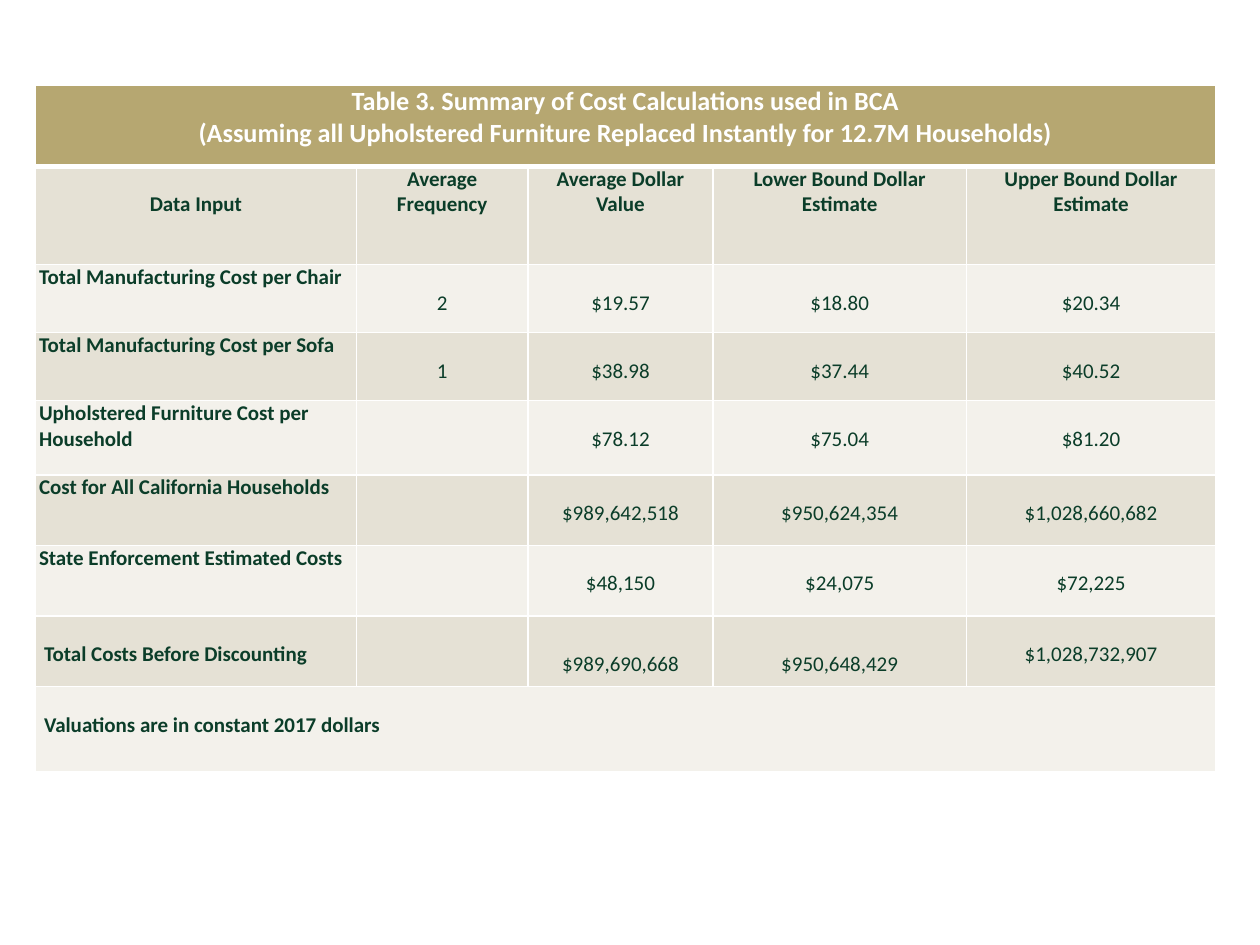
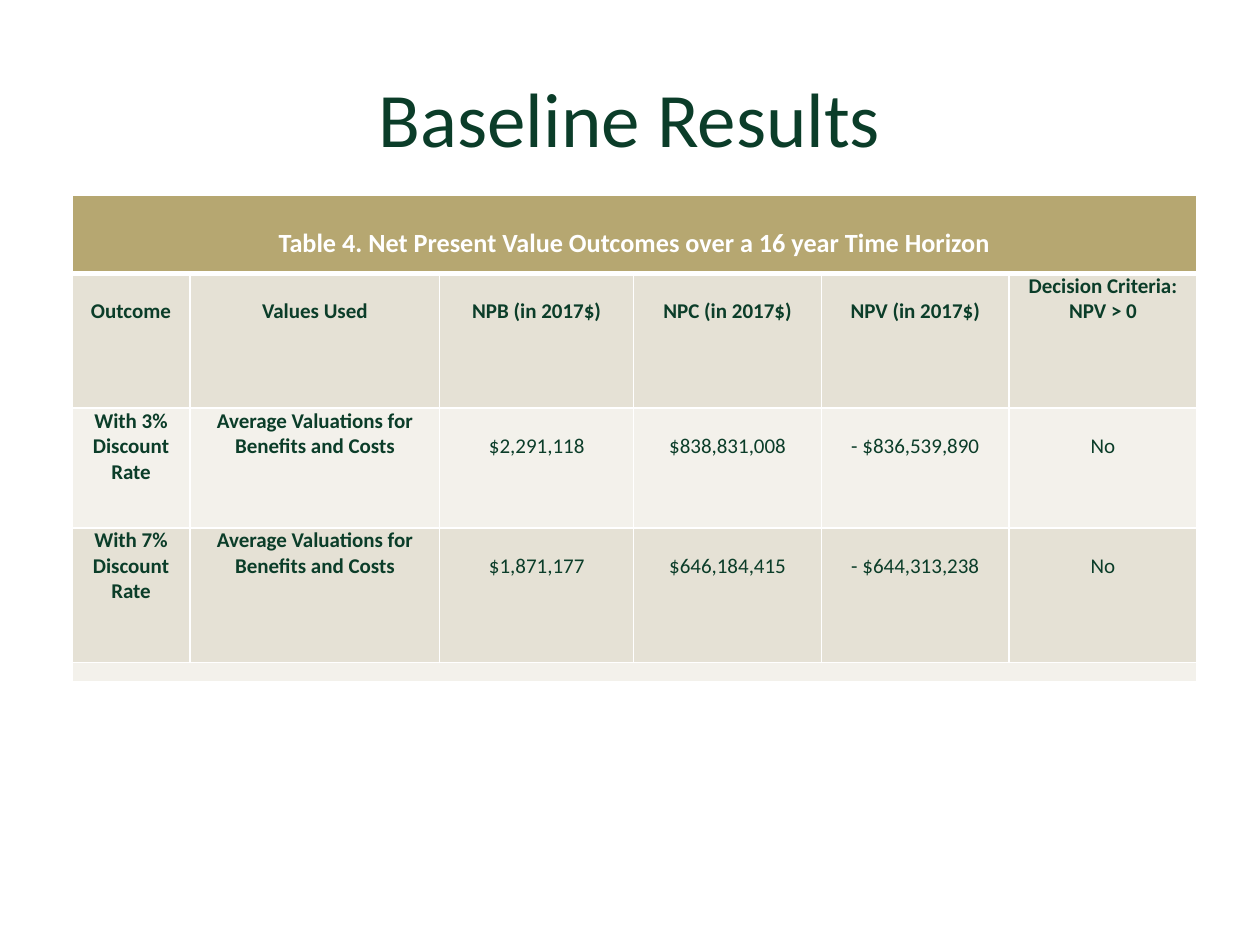
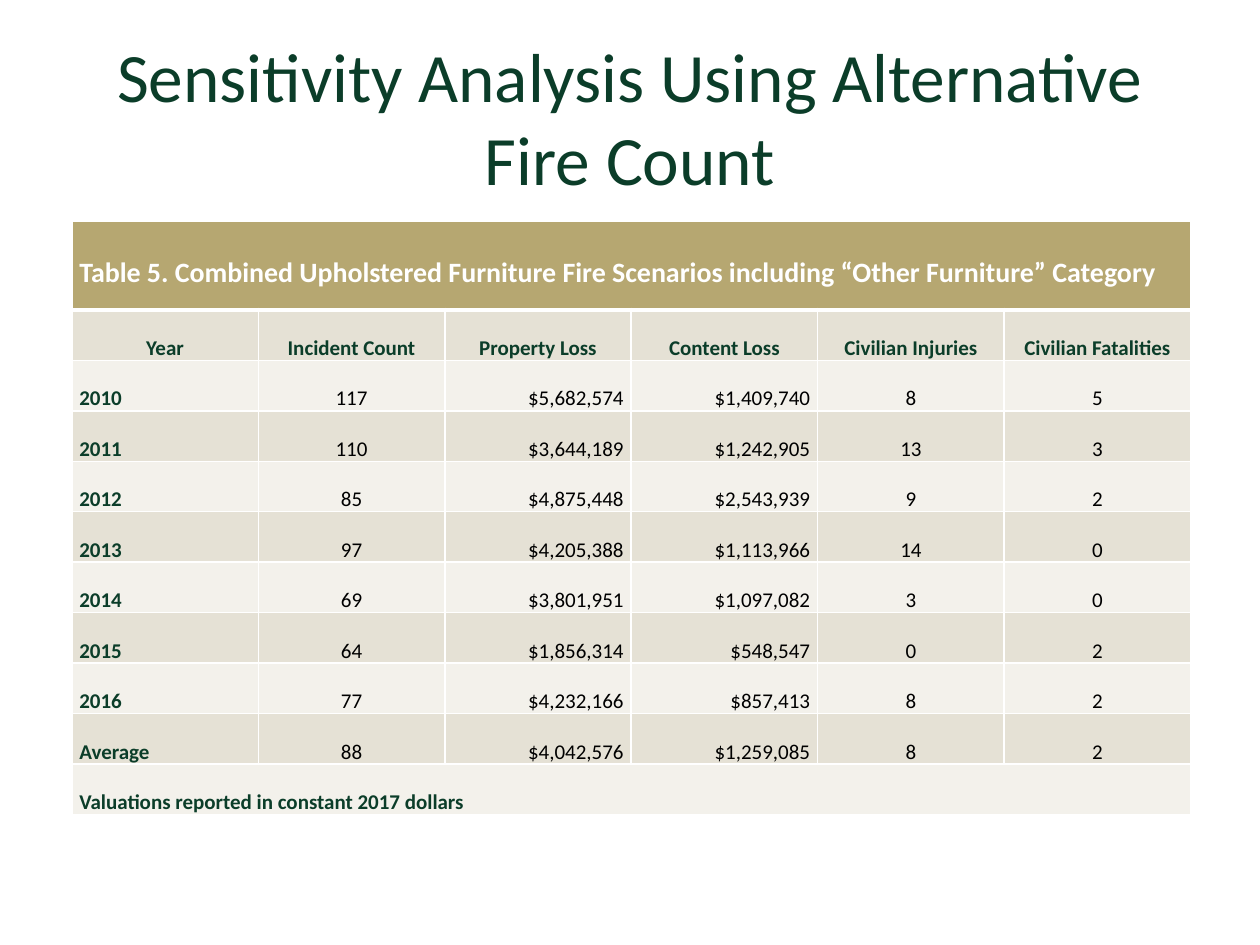
from lxml.etree import SubElement
from pptx import Presentation
from pptx.dml.color import RGBColor
from pptx.enum.text import MSO_ANCHOR as Anchor, PP_ALIGN as Align
from pptx.oxml.ns import qn
from pptx.util import Inches, Pt

FONT = "Calibri"
GREEN, GOLD, WHITE, BLACK = "0B3D29", "B6A771", "FFFFFF", "000000"
BANDS = "E5E1D5", "F3F1EB"
TEXT_SIZE, EMPTY_SIZE = 12, 9
LEFT, CENTER, RIGHT = Align.LEFT, Align.CENTER, Align.RIGHT

# Each table has a caption row, a header row, body rows and a note row.
# "single" and "anchors" are keyed by (row, column); other cells are
# double-spaced and anchored at the top.
COSTS = {
    "caption": "Table 3. Summary of Cost Calculations used in BCA\n"
               "(Assuming all Upholstered Furniture Replaced Instantly for 12.7M Households)",
    "caption_size": 15,
    "caption_align": CENTER,
    "header": ["Data Input", "Average Frequency", "Average Dollar Value",
               "Lower Bound Dollar Estimate", "Upper Bound Dollar Estimate"],
    "body": [
        ["Total Manufacturing Cost per Chair", "2", "$19.57", "$18.80", "$20.34"],
        ["Total Manufacturing Cost per Sofa", "1", "$38.98", "$37.44", "$40.52"],
        ["Upholstered Furniture Cost per Household", "", "$78.12", "$75.04", "$81.20"],
        ["Cost for All California Households", "",
         "$989,642,518", "$950,624,354", "$1,028,660,682"],
        ["State Enforcement Estimated Costs", "", "$48,150", "$24,075", "$72,225"],
        ["Total Costs Before Discounting", "",
         "$989,690,668", "$950,648,429", "$1,028,732,907"],
    ],
    "note": "Valuations are in constant 2017 dollars",
    "position": (0.28, 0.68),
    "widths": [2.55, 1.36, 1.47, 2.01, 1.98],
    "heights": [0.64, 0.78, 0.54, 0.54, 0.59, 0.56, 0.56, 0.56, 0.68],
    "aligns": [LEFT] + [CENTER] * 4,
    "label_columns": 1,
    "value_color": GREEN,
    "margin": 0.07,
    "single_label_margin": 0.03,
    "single": {(0, 0)} | {(1, col) for col in range(1, 5)} | {(row, 0) for row in range(2, 7)},
    "anchors": {(7, 2): Anchor.MIDDLE, (7, 3): Anchor.MIDDLE},
}
OUTCOMES = {
    "caption": "Table 4. Net Present Value Outcomes over a 16 year Time Horizon",
    "caption_size": 15,
    "caption_align": CENTER,
    "header": ["Outcome", "Values Used", "NPB (in 2017$)", "NPC (in 2017$)",
               "NPV (in 2017$)", "Decision Criteria: NPV > 0"],
    "body": [
        ["With 3% Discount Rate", "Average Valuations for Benefits and Costs",
         "$2,291,118", "$838,831,008", "- $836,539,890", "No"],
        ["With 7% Discount Rate", "Average Valuations for Benefits and Costs",
         "$1,871,177", "$646,184,415", "- $644,313,238", "No"],
    ],
    "note": "",
    "position": (0.57, 1.55),
    "widths": [0.94, 1.98, 1.54, 1.49, 1.49, 1.49],
    "heights": [0.62, 1.07, 0.95, 1.07, 0.05],
    "aligns": [CENTER] * 6,
    "label_columns": 2,
    "value_color": GREEN,
    "margin": 0.04,
    "single_label_margin": 0.04,
    "single": {(1, 5)} | {(row, col) for row in (2, 3) for col in (0, 1)},
    "anchors": {},
}
FIRES = {
    "caption": "Table 5. Combined Upholstered Furniture Fire Scenarios "
               "including “Other Furniture” Category",
    "caption_size": 16,
    "caption_align": LEFT,
    "header": ["Year", "Incident Count", "Property Loss", "Content Loss",
               "Civilian Injuries", "Civilian Fatalities"],
    "body": [
        ["2010", "117", "$5,682,574", "$1,409,740", "8", "5"],
        ["2011", "110", "$3,644,189", "$1,242,905", "13", "3"],
        ["2012", "85", "$4,875,448", "$2,543,939", "9", "2"],
        ["2013", "97", "$4,205,388", "$1,113,966", "14", "0"],
        ["2014", "69", "$3,801,951", "$1,097,082", "3", "0"],
        ["2015", "64", "$1,856,314", "$548,547", "0", "2"],
        ["2016", "77", "$4,232,166", "$857,413", "8", "2"],
        ["Average", "88", "$4,042,576", "$1,259,085", "8", "2"],
    ],
    "note": "Valuations reported in constant 2017 dollars",
    "position": (0.57, 1.76),
    "widths": [1.48] * 6,
    "heights": [0.7, 0.36] + [0.39] * 8 + [0.36],
    "aligns": [LEFT, CENTER, RIGHT, RIGHT, CENTER, CENTER],
    "label_columns": 1,
    "value_color": BLACK,
    "margin": 0.06,
    "single_label_margin": 0.06,
    "single": set(),
    "anchors": {(9, col): Anchor.BOTTOM for col in range(1, 6)},
}
PAGES = [
    ("", 0, COSTS),
    ("Baseline Results", 44, OUTCOMES),
    ("Sensitivity Analysis Using Alternative Fire Count", 39.6, FIRES),
]


def rgb(color):
    return RGBColor.from_string(color)


def write(frame, text, size, color, bold=False, align=CENTER, spacing=1.0):
    frame.text = text
    for para in frame.paragraphs:
        para.alignment = align
        para.line_spacing = spacing
        for span in para.runs:
            span.font.name = FONT
            span.font.size = Pt(size)
            span.font.bold = bold
            span.font.color.rgb = rgb(color)
        if not para.runs:
            SubElement(para._p, qn("a:endParaRPr"), sz=str(EMPTY_SIZE * 100))


def add_title(page, text, size):
    box = page.shapes.add_textbox(Inches(0.5), Inches(0.3), Inches(9), Inches(1.25))
    frame = box.text_frame
    frame.word_wrap = True
    frame.vertical_anchor = Anchor.MIDDLE
    write(frame, text, size, GREEN)


def set_borders(cell, top, bottom):
    properties = cell._tc.get_or_add_tcPr()
    for side, width in (("L", 1), ("R", 1), ("T", top), ("B", bottom)):
        line = SubElement(properties, qn(f"a:ln{side}"), w=str(Pt(width)))
        fill = SubElement(line, qn("a:solidFill"))
        SubElement(fill, qn("a:srgbClr"), val=WHITE)


def style_cell(cell, row, col, data):
    """Apply the borders, band fill, margins and anchor of one cell."""
    set_borders(cell, top=3 if row == 1 else 1, bottom=3 if row == 0 else 1)
    cell.fill.solid()
    cell.fill.fore_color.rgb = rgb(GOLD if row == 0 else BANDS[(row - 1) % 2])
    is_single_label = row > 1 and col == 0 and (row, col) in data["single"]
    margin = data["single_label_margin" if is_single_label else "margin"]
    cell.margin_left = cell.margin_right = Inches(margin)
    cell.margin_top = cell.margin_bottom = 0
    cell.vertical_anchor = data["anchors"].get((row, col), Anchor.TOP)


def text_style(row, col, last, data):
    """Return size, colour, bold and alignment for one cell."""
    if row == 0:
        return data["caption_size"], WHITE, True, data["caption_align"]
    if row == 1:
        return TEXT_SIZE, GREEN, True, CENTER
    if row == last:
        return TEXT_SIZE, GREEN, True, LEFT
    is_label = col < data["label_columns"]
    return TEXT_SIZE, GREEN if is_label else data["value_color"], is_label, data["aligns"][col]


def add_data_table(page, data):
    widths, heights = data["widths"], data["heights"]
    rows = [[data["caption"]], data["header"], *data["body"], [data["note"]]]
    last = len(rows) - 1
    left, top = data["position"]
    table = page.shapes.add_table(
        len(rows), len(widths), Inches(left), Inches(top),
        Inches(sum(widths)), Inches(sum(heights))).table
    for column, width in zip(table.columns, widths):
        column.width = Inches(width)
    for table_row, height in zip(table.rows, heights):
        table_row.height = Inches(height)
    for row, texts in enumerate(rows):
        for col in range(len(widths)):
            style_cell(table.cell(row, col), row, col, data)
        if len(texts) == 1:
            table.cell(row, 0).merge(table.cell(row, len(widths) - 1))
        for col, text in enumerate(texts):
            spacing = 1.0 if (row, col) in data["single"] else 2.0
            write(table.cell(row, col).text_frame, text,
                  *text_style(row, col, last, data), spacing)


def main():
    deck = Presentation()
    deck.slide_width, deck.slide_height = Inches(10), Inches(7.5)
    for title, size, data in PAGES:
        page = deck.slides.add_slide(deck.slide_layouts[6])
        if title:
            add_title(page, title, size)
        add_data_table(page, data)
    deck.save("out.pptx")


if __name__ == "__main__":
    main()
